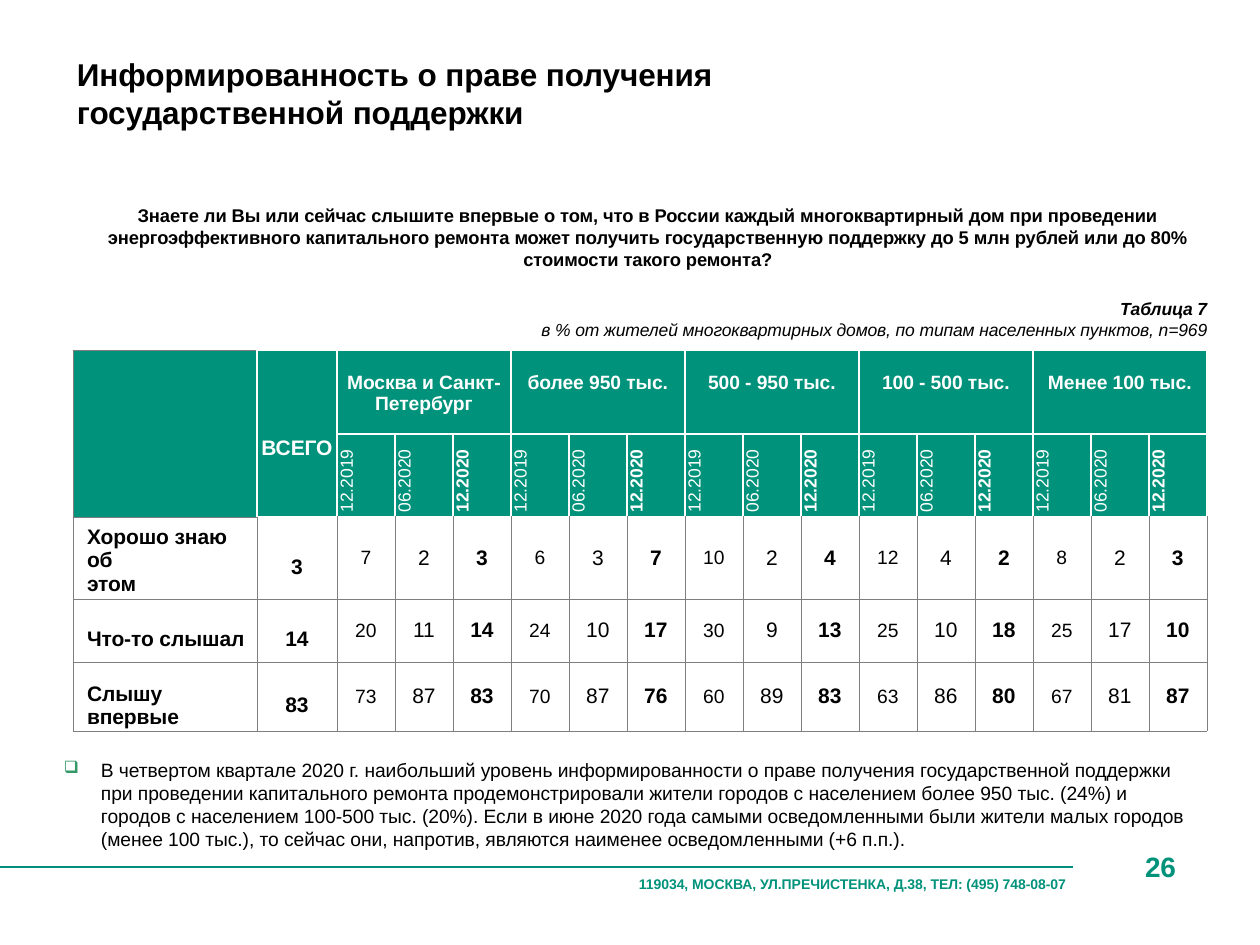
from dataclasses import dataclass
from lxml import etree
from pptx import Presentation
from pptx.dml.color import RGBColor
from pptx.enum.shapes import MSO_CONNECTOR
from pptx.enum.text import MSO_ANCHOR, PP_ALIGN
from pptx.oxml.ns import qn
from pptx.util import Emu, Pt

LEFT, MID, RIGHT = PP_ALIGN.LEFT, PP_ALIGN.CENTER, PP_ALIGN.RIGHT
TOP, CENTRE = MSO_ANCHOR.TOP, MSO_ANCHOR.MIDDLE
STRAIGHT = MSO_CONNECTOR.STRAIGHT
FONT = "Arial"
COLORS = {"black": "000000", "white": "FFFFFF", "green": "00927A",
          "rule": "00907C", "grey": "7E7E7E", "bullet": "339966"}
WHITE, GREY = ("white", 1), ("grey", 0.25)


@dataclass
class Box:
    x: int
    y: int
    w: int
    h: int


@dataclass
class Group:
    name: str
    rows: list[tuple[int, int, int]]


@dataclass
class Answer:
    label: list[str]
    total: int
    pad: int


GROUPS = [
    Group("Москва и Санкт-\nПетербург", [(7, 2, 3), (20, 11, 14), (73, 87, 83)]),
    Group("более 950 тыс.", [(6, 3, 7), (24, 10, 17), (70, 87, 76)]),
    Group("500 - 950 тыс.", [(10, 2, 4), (30, 9, 13), (60, 89, 83)]),
    Group("100 - 500 тыс.", [(12, 4, 2), (25, 10, 18), (63, 86, 80)]),
    Group("Менее 100 тыс.", [(8, 2, 3), (25, 17, 10), (67, 81, 87)]),
]
ANSWERS = [
    Answer(["Хорошо знаю об", "этом"], 3, 5),
    Answer(["Что-то слышал"], 14, 18),
    Answer(["Слышу впервые"], 83, 18),
]
DATES = ["12.2019", "06.2020", "12.2020"]
SIZES = [11, 12, 12]
COLS = [184, 80] + [58] * 15
ROWS = [84, 83, 82, 63, 69]


def px(n: int) -> Emu:
    return Emu(round(n * 914400 / 126))


def rgb(name: str) -> RGBColor:
    return RGBColor.from_string(COLORS[name])


def write(frame, text: str, *, size: float, color: str = "black",
          bold: bool = False, ital: bool = False, align=LEFT,
          space: float = 0, track: int = 0, indent: int = 0,
          hang: int = 0, mark: str = "") -> None:
    par = frame.paragraphs[0]
    if par.runs:
        par = frame.add_paragraph()
    par.alignment = align
    props = par._p.get_or_add_pPr()
    props.set("marL", str(px(indent)))
    props.set("indent", str(px(-hang)))
    if space:
        par.space_before = Pt(space)
    if mark:
        tint = etree.SubElement(props, qn("a:buClr"))
        etree.SubElement(tint, qn("a:srgbClr"), val=COLORS["bullet"])
        etree.SubElement(props, qn("a:buSzPct"), val="88000")
        etree.SubElement(props, qn("a:buChar"), char=mark)
    run = par.add_run()
    run.text = text
    font = run.font
    font.name, font.size = FONT, Pt(size)
    font.bold, font.italic = bold, ital
    font.color.rgb = rgb(color)
    if track:
        run._r.get_or_add_rPr().set("spc", str(track))


def add_text(slide, box: Box):
    frame = slide.shapes.add_textbox(
        px(box.x), px(box.y), px(box.w), px(box.h)).text_frame
    frame.word_wrap = True
    frame.margin_left = frame.margin_right = 0
    frame.margin_top = frame.margin_bottom = 0
    return frame


def edge(cell, **sides: tuple[str, float]) -> None:
    props = cell._tc.get_or_add_tcPr()
    for side in "LRTB":
        color, width = sides[side]
        line = etree.SubElement(props, qn(f"a:ln{side}"), w=str(Pt(width)))
        fill = etree.SubElement(line, qn("a:solidFill"))
        etree.SubElement(fill, qn("a:srgbClr"), val=COLORS[color])


def style(cell, row: int, col: int) -> None:
    cell.margin_left = cell.margin_right = 0
    cell.margin_top = cell.margin_bottom = 0
    cell.vertical_anchor = CENTRE
    if row < 2:
        outer = GREY if col == 0 else WHITE
        edge(cell, L=outer, R=WHITE, T=outer, B=outer)
        cell.fill.solid()
        cell.fill.fore_color.rgb = rgb("green")
    else:
        top = WHITE if row == 2 and col else GREY
        edge(cell, L=GREY, R=GREY, T=top, B=GREY)
        cell.fill.background()


def add_grid(slide) -> None:
    shape = slide.shapes.add_table(
        len(ROWS), len(COLS), px(73), px(350), px(sum(COLS)), px(sum(ROWS)))
    grid = shape.table
    for col, width in zip(grid.columns, COLS):
        col.width = px(width)
    for row, height in zip(grid.rows, ROWS):
        row.height = px(height)
    for r in range(len(ROWS)):
        for c in range(len(COLS)):
            style(grid.cell(r, c), r, c)
    for c in (0, 1):
        grid.cell(0, c).merge(grid.cell(1, c))
    total = grid.cell(0, 1)
    total.margin_top = px(29)
    write(total.text_frame, "ВСЕГО", size=12, color="white", bold=True,
          align=MID, track=-5)
    for g, group in enumerate(GROUPS):
        first = 2 + g * len(DATES)
        head = grid.cell(0, first)
        head.merge(grid.cell(0, first + len(DATES) - 1))
        head.vertical_anchor, head.margin_top = TOP, px(22)
        for line in group.name.split("\n"):
            write(head.text_frame, line, size=11, color="white", bold=True,
                  align=MID, track=-5)
        for d, date in enumerate(DATES):
            bold = d == len(DATES) - 1
            cell = grid.cell(1, first + d)
            cell._tc.get_or_add_tcPr().set("vert", "vert270")
            cell.margin_right = px(11)
            write(cell.text_frame, date, size=10, color="white",
                  bold=bold, align=MID)
            for r, values in enumerate(group.rows, 2):
                write(grid.cell(r, first + d).text_frame, str(values[d]),
                      size=SIZES[d], bold=bold, align=MID)
    for r, answer in enumerate(ANSWERS, 2):
        label, total = grid.cell(r, 0), grid.cell(r, 1)
        label.margin_top, total.margin_top = px(answer.pad), px(18)
        for line in answer.label:
            write(label.text_frame, line, size=12, bold=True, indent=14, track=-5)
        write(total.text_frame, str(answer.total), size=12, bold=True, align=MID)


def add_rule(slide) -> None:
    rule = slide.shapes.add_connector(STRAIGHT, 0, px(867), px(1073), px(867))
    rule.line.color.rgb, rule.line.width = rgb("rule"), Pt(1.2)
    etree.SubElement(rule._element.spPr, qn("a:effectLst"))


def main() -> None:
    deck = Presentation()
    deck.slide_width, deck.slide_height = px(1260), px(945)
    slide = deck.slides.add_slide(deck.slide_layouts[6])
    add_rule(slide)
    write(add_text(slide, Box(63, 758, 1129, 94)),
          "В четвертом квартале 2020 г. наибольший уровень информированности о "
          "праве получения государственной поддержки при проведении капитального "
          "ремонта продемонстрировали жители городов с населением более 950 тыс. "
          "(24%) и городов с населением 100-500 тыс. (20%). Если в июне 2020 года "
          "самыми осведомленными были жители малых городов (менее 100 тыс.), то "
          "сейчас они, напротив, являются наименее осведомленными (+6 п.п.).",
          size=11, track=-5, indent=38, hang=37, mark="❑")
    add_grid(slide)
    ask = add_text(slide, Box(89, 204, 1118, 137))
    write(ask, "Знаете ли Вы или сейчас слышите впервые о том, что в России каждый "
          "многоквартирный дом при проведении энергоэффективного капитального "
          "ремонта может получить государственную поддержку до 5 млн рублей или "
          "до 80% стоимости такого ремонта?", size=10.5, bold=True, align=MID, track=-3)
    write(ask, "Таблица 7", size=10, bold=True, ital=True, align=RIGHT,
          space=16, track=-5)
    write(ask, "в % от жителей многоквартирных домов, по типам населенных пунктов, "
          "n=969", size=10, ital=True, align=RIGHT, track=-5)
    write(add_text(slide, Box(1140, 850, 42, 35)), "26", size=16,
          color="green", bold=True, indent=5, track=-5)
    write(add_text(slide, Box(638, 876, 438, 19)),
          "119034, МОСКВА, УЛ.ПРЕЧИСТЕНКА, Д.38, ТЕЛ: (495) 748-08-07",
          size=8, color="green", bold=True, indent=1, track=-5)
    write(add_text(slide, Box(76, 55, 757, 78)),
          "Информированность о праве получения государственной поддержки",
          size=18, bold=True, indent=1, track=-5)
    deck.save("out.pptx")


if __name__ == "__main__":
    main()
